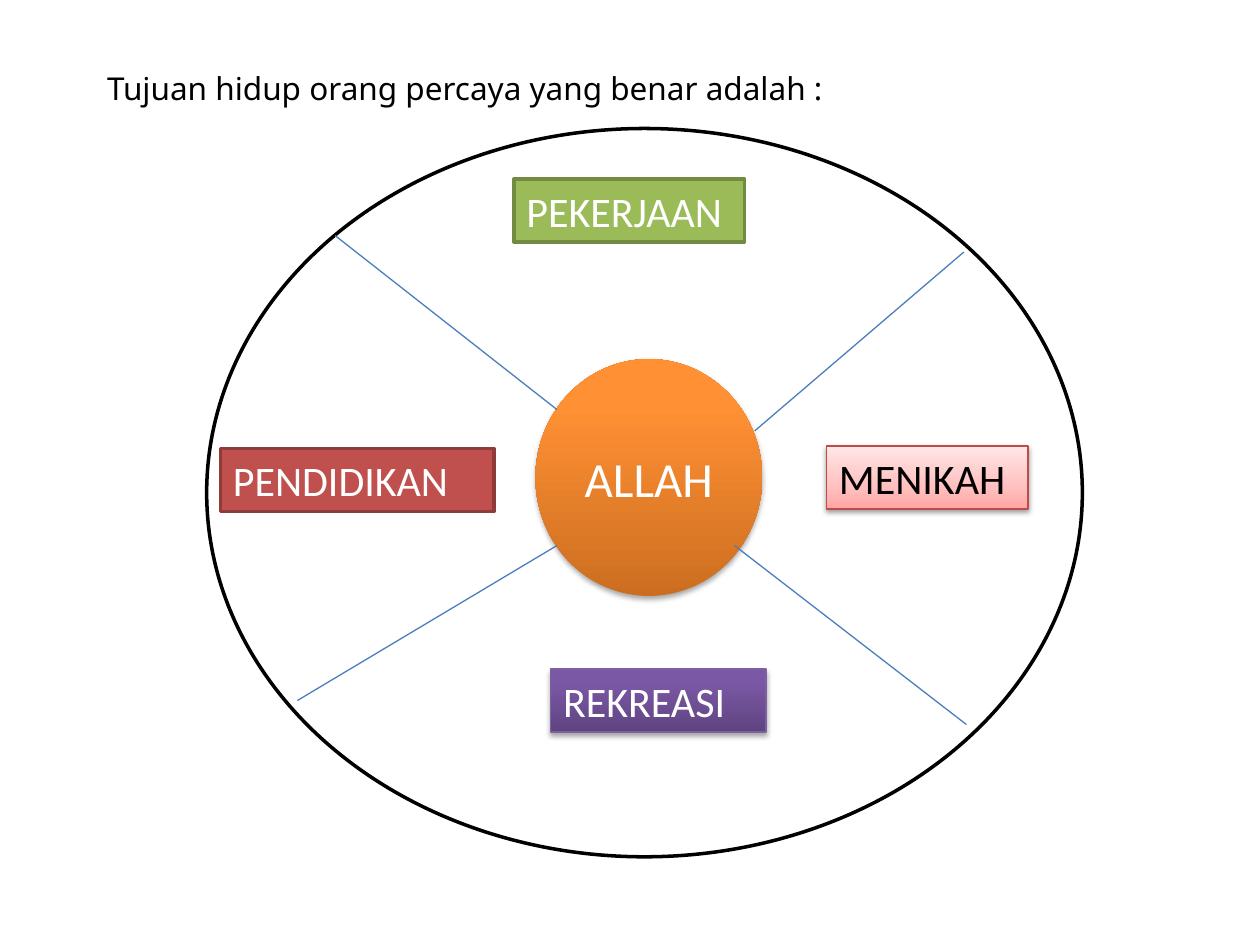
from lxml import etree
from pptx import Presentation
from pptx.dml.color import RGBColor
from pptx.enum.shapes import MSO_CONNECTOR, MSO_SHAPE
from pptx.enum.text import MSO_ANCHOR, MSO_AUTO_SIZE, PP_ALIGN
from pptx.oxml.ns import qn
from pptx.util import Pt

OVAL, RECTANGLE = MSO_SHAPE.OVAL, MSO_SHAPE.RECTANGLE
STRAIGHT = MSO_CONNECTOR.STRAIGHT
TOP, MIDDLE = MSO_ANCHOR.TOP, MSO_ANCHOR.MIDDLE
LEFT, CENTER = PP_ALIGN.LEFT, PP_ALIGN.CENTER
NO_AUTOFIT = MSO_AUTO_SIZE.NONE
TITLE_ONLY = 5

GOALS = [
    ("PEKERJAAN", (293.76, 102.24, 131.76), "9BBB59", ("738A42", 2), None, "FFFFFF"),
    ("MENIKAH", (472.32, 254.88, 115.2),
     [(0, "FFA6A5"), (35, "FFC0BF"), (100, "FFE7E7")], ("BF4C48", 0.75), (38, 1.6), "000000"),
    ("REKREASI", (314.64, 382.32, 123.12),
     [(0, "5F4480"), (80, "7B58A6"), (100, "7C57A8")], ("7D60A0", 0.75), (35, 1.8), "FFFFFF"),
    ("PENDIDIKAN", (126, 256.32, 156.24), "C0504D", ("8E3B39", 2), None, "FFFFFF"),
]
GOAL_HEIGHT = 36
CENTRE_GRADIENT = [(0, "CC6E20"), (80, "FF9034"), (100, "FF9136")]
SPOKES = [
    ((318.24, 234), (191.52, 134.64)),
    ((431.28, 246.24), (550.8, 144)),
    ((318.24, 311.76), (169.92, 400.32)),
    ((419.76, 311.76), (552.24, 414)),
]


def rgb(colour):
    """Turn a hex string into a colour."""
    return RGBColor.from_string(colour)


def add_colour(parent, colour):
    """Append an sRGB colour element and return it."""
    return etree.SubElement(parent, qn("a:srgbClr"), val=colour)


def set_gradient(shape, stops):
    """Fill a shape with a gradient that runs from bottom to top."""
    shape.fill.gradient()
    shape.fill.gradient_angle = 90
    stop_list = shape._element.spPr.find(".//" + qn("a:gsLst"))
    for old_stop in list(stop_list):
        stop_list.remove(old_stop)
    for percent, colour in stops:
        stop = etree.SubElement(stop_list, qn("a:gs"), pos=str(percent * 1000))
        add_colour(stop, colour)


def set_shadow(shape, opacity, distance):
    """Give a shape a soft black shadow that falls straight down."""
    effects = shape._element.spPr.find(qn("a:effectLst"))
    shadow = etree.SubElement(
        effects, qn("a:outerShdw"), blurRad=str(Pt(3.1)), dist=str(Pt(distance)),
        dir="5400000", rotWithShape="0")
    etree.SubElement(add_colour(shadow, "000000"), qn("a:alpha"), val=str(opacity * 1000))


def write_text(shape, text, font_name, size, colour, alignment, anchor):
    """Write one formatted paragraph into a shape."""
    frame = shape.text_frame
    frame.text = text
    frame.word_wrap = True
    frame.auto_size = NO_AUTOFIT
    frame.vertical_anchor = anchor
    paragraph = frame.paragraphs[0]
    paragraph.alignment = alignment
    paragraph.font.name = font_name
    paragraph.font.size = Pt(size)
    paragraph.font.color.rgb = rgb(colour)


def add_title(slide, text):
    """Place the introductory sentence in the title placeholder."""
    title = slide.shapes.title
    title.left, title.top, title.width, title.height = map(Pt, (54, 36, 576, 28.8))
    write_text(title, text, "Noto Sans", 18, "000000", LEFT, TOP)


def add_figure(slide, preset, box, fill, outline=None, shadow=None):
    """Add a preset shape with a solid or gradient fill."""
    figure = slide.shapes.add_shape(preset, *map(Pt, box))
    figure.shadow.inherit = False
    if isinstance(fill, str):
        figure.fill.solid()
        figure.fill.fore_color.rgb = rgb(fill)
    else:
        set_gradient(figure, fill)
    if outline:
        colour, width = outline
        figure.line.color.rgb = rgb(colour)
        figure.line.width = Pt(width)
    else:
        figure.line.fill.background()
    if shadow:
        set_shadow(figure, *shadow)
    return figure


def add_spoke(slide, start, end):
    """Draw a thin line from the centre towards the rim."""
    spoke = slide.shapes.add_connector(STRAIGHT, *map(Pt, start + end))
    spoke.line.color.rgb = rgb("4B7EBC")
    spoke.line.width = Pt(0.75)
    etree.SubElement(spoke._element.spPr, qn("a:effectLst"))


def main():
    """Build the slide and save it."""
    presentation = Presentation()
    presentation.slide_width, presentation.slide_height = Pt(720), Pt(540)
    slide = presentation.slides.add_slide(presentation.slide_layouts[TITLE_ONLY])
    add_title(slide, "Tujuan hidup orang percaya yang benar adalah :")
    add_figure(slide, OVAL, (118.08, 73.44, 500.4, 416.16), "FFFFFF", ("000000", 2))
    centre = add_figure(slide, OVAL, (306, 205.2, 129.6, 135.36), CENTRE_GRADIENT,
                        shadow=(35, 1.8))
    write_text(centre, "ALLAH", "Calibri", 28, "FFFFFF", CENTER, MIDDLE)
    for text, place, fill, outline, shadow, colour in GOALS:
        goal = add_figure(slide, RECTANGLE, (*place, GOAL_HEIGHT), fill, outline, shadow)
        write_text(goal, text, "Calibri", 24, colour, LEFT, TOP)
    for start, end in SPOKES:
        add_spoke(slide, start, end)
    presentation.save("out.pptx")


if __name__ == "__main__":
    main()
